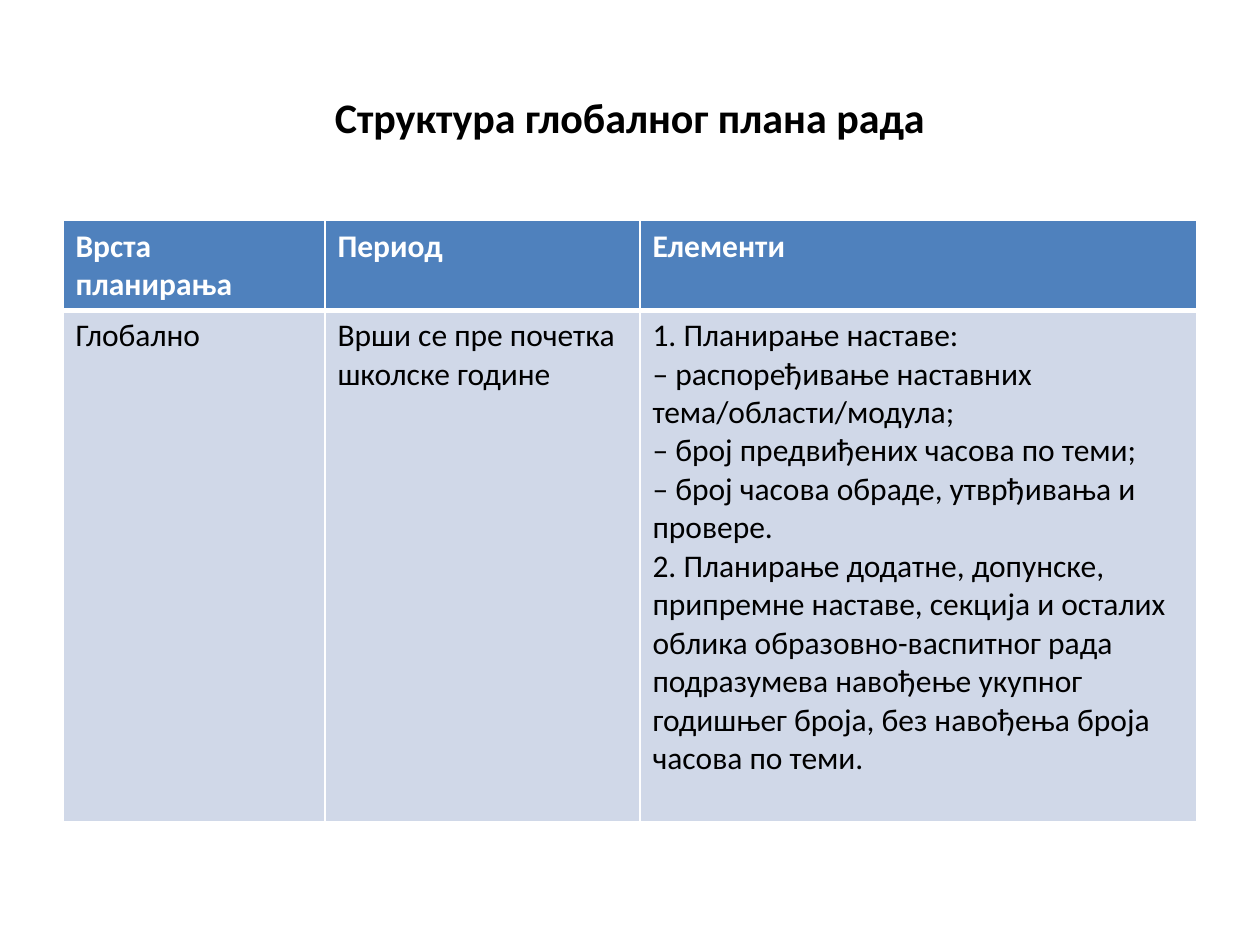
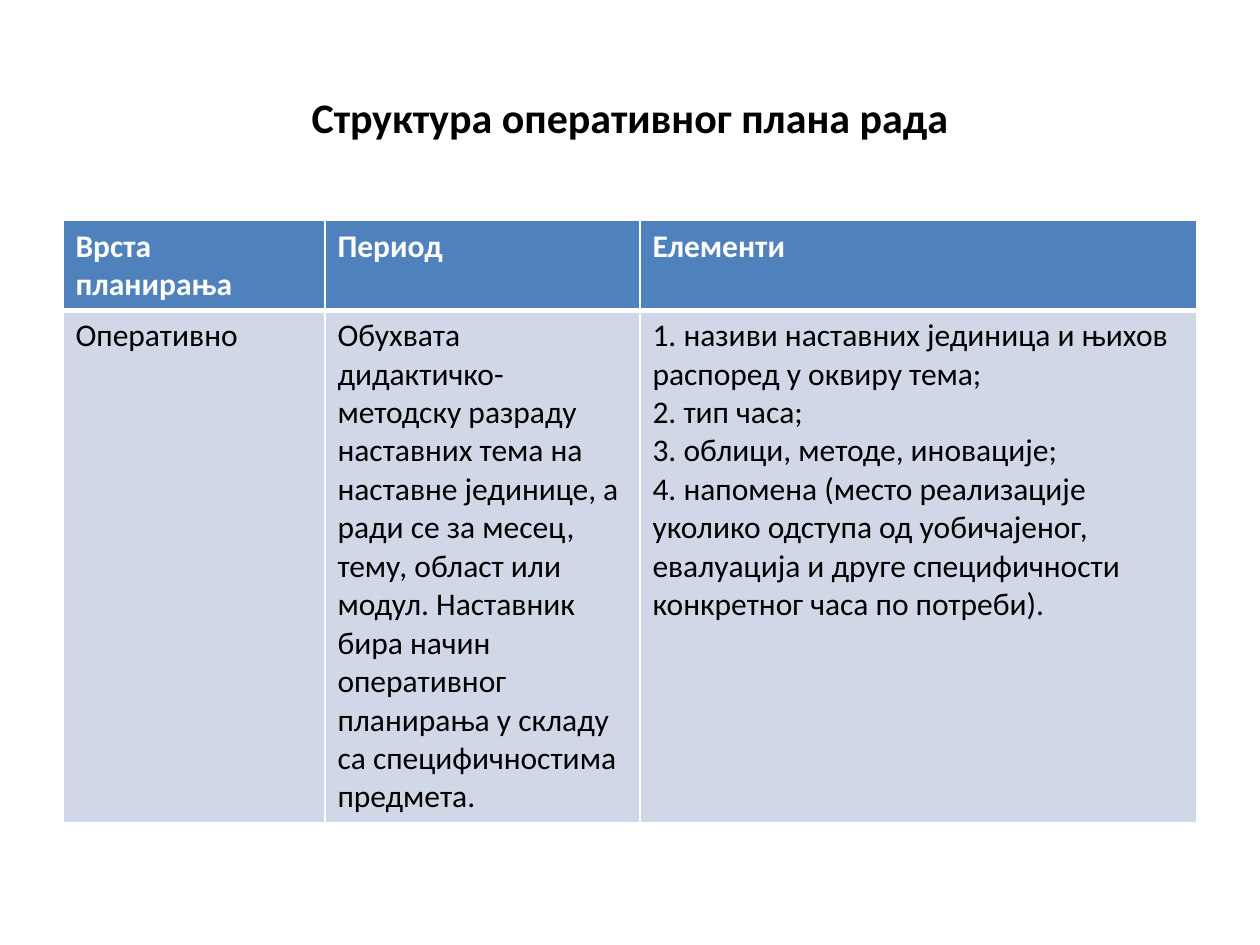
from lxml.etree import SubElement
from pptx import Presentation
from pptx.dml.color import RGBColor
from pptx.enum.text import MSO_ANCHOR, PP_ALIGN
from pptx.oxml.ns import qn
from pptx.util import Cm, Pt

HEADINGS = ["Врста планирања", "Период", "Елементи"]
PLANS = [
    {
        "title": "Структура глобалног плана рада",
        "row": [
            ["Глобално"],
            ["Врши се пре почетка школске године"],
            [
                "1. Планирање наставе:",
                "– распоређивање наставних тема/области/модула;",
                "– број предвиђених часова по теми;",
                "– број часова обраде, утврђивања и провере.",
                "2. Планирање додатне, допунске, припремне наставе, секција и "
                "осталих облика образовно-васпитног рада подразумева навођење "
                "укупног годишњег броја, без навођења броја часова по теми.",
            ],
        ],
    },
    {
        "title": "Структура оперативног плана рада",
        "row": [
            ["Оперативно"],
            [
                "Обухвата дидактичко-методску разраду наставних тема на "
                "наставне јединице, а ради се за месец, тему, област или модул. "
                "Наставник бира начин оперативног планирања у складу са "
                "специфичностима предмета.",
            ],
            [
                "1. називи наставних јединица и њихов распоред у оквиру тема;",
                "2. тип часа;",
                "3. облици, методе, иновације;",
                "4. напомена (место реализације уколико одступа од уобичајеног, "
                "евалуација и друге специфичности конкретног часа по потреби).",
            ],
        ],
    },
]

WHITE, BLACK, BLUE, PALE = "FFFFFF", "000000", "4F81BD", "D0D8E8"
FONT = "Calibri"
TITLE_FONT = {"name": FONT, "size": Pt(24), "bold": True}
HEADING_FONT = {"name": FONT, "size": Pt(18), "bold": True}
BODY_FONT = {**HEADING_FONT, "bold": False}

LEFT, WIDTH = Cm(1.27), Cm(22.86)
TITLE_BOX = {"left": LEFT, "top": Cm(0.76), "width": WIDTH, "height": Cm(3.18)}
TABLE_TOP = Cm(4.45)
COLUMN_WIDTHS = [Cm(5.28), Cm(6.35), Cm(11.23)]
ROW_HEIGHTS = [Cm(1.8), Cm(10.32)]

# Line widths in points; the rule between heading and body is the thick one.
HEADING_BORDERS = {"lnL": 1, "lnR": 1, "lnT": 1, "lnB": 3}
BODY_BORDERS = {"lnL": 1, "lnR": 1, "lnT": 3, "lnB": 1}
HEADING_STYLE = (HEADING_FONT, WHITE, BLUE, HEADING_BORDERS)
BODY_STYLE = (BODY_FONT, BLACK, PALE, BODY_BORDERS)


def rgb(color):
    return RGBColor.from_string(color)


def apply(target, values):
    for name, value in values.items():
        setattr(target, name, value)


def write(frame, lines, font, color, align):
    frame.text = "\n".join(lines)
    for paragraph in frame.paragraphs:
        paragraph.alignment = align
        for run in paragraph.runs:
            apply(run.font, font)
            run.font.color.rgb = rgb(color)


def add_borders(cell, borders):
    """Must run before the cell is filled, as lines precede the fill in XML."""
    properties = cell._tc.get_or_add_tcPr()
    for edge, points in borders.items():
        line = SubElement(properties, qn(f"a:{edge}"), w=str(Pt(points)))
        fill = SubElement(line, qn("a:solidFill"))
        SubElement(fill, qn("a:srgbClr"), val=WHITE)


def fill_cell(cell, lines, style):
    font, color, background, borders = style
    add_borders(cell, borders)
    cell.fill.solid()
    cell.fill.fore_color.rgb = rgb(background)
    write(cell.text_frame, lines, font, color, PP_ALIGN.LEFT)


def add_title(slide, text):
    title = slide.shapes.title
    apply(title, TITLE_BOX)
    title.text_frame.vertical_anchor = MSO_ANCHOR.MIDDLE
    write(title.text_frame, [text], TITLE_FONT, BLACK, PP_ALIGN.CENTER)


def add_plan_table(slide, plan_row):
    rows = [[[heading] for heading in HEADINGS], plan_row]
    table = slide.shapes.add_table(
        len(rows), len(HEADINGS), LEFT, TABLE_TOP, WIDTH, sum(ROW_HEIGHTS)
    ).table
    for column, width in zip(table.columns, COLUMN_WIDTHS):
        column.width = width
    for row, height, contents, style in zip(
        table.rows, ROW_HEIGHTS, rows, (HEADING_STYLE, BODY_STYLE)
    ):
        row.height = height
        for cell, lines in zip(row.cells, contents):
            fill_cell(cell, lines, style)


def main():
    deck = Presentation()
    apply(deck, {"slide_width": Cm(25.4), "slide_height": Cm(19.05)})
    title_only = deck.slide_layouts.get_by_name("Title Only")
    for plan in PLANS:
        slide = deck.slides.add_slide(title_only)
        add_title(slide, plan["title"])
        add_plan_table(slide, plan["row"])
    deck.save("out.pptx")


if __name__ == "__main__":
    main()
